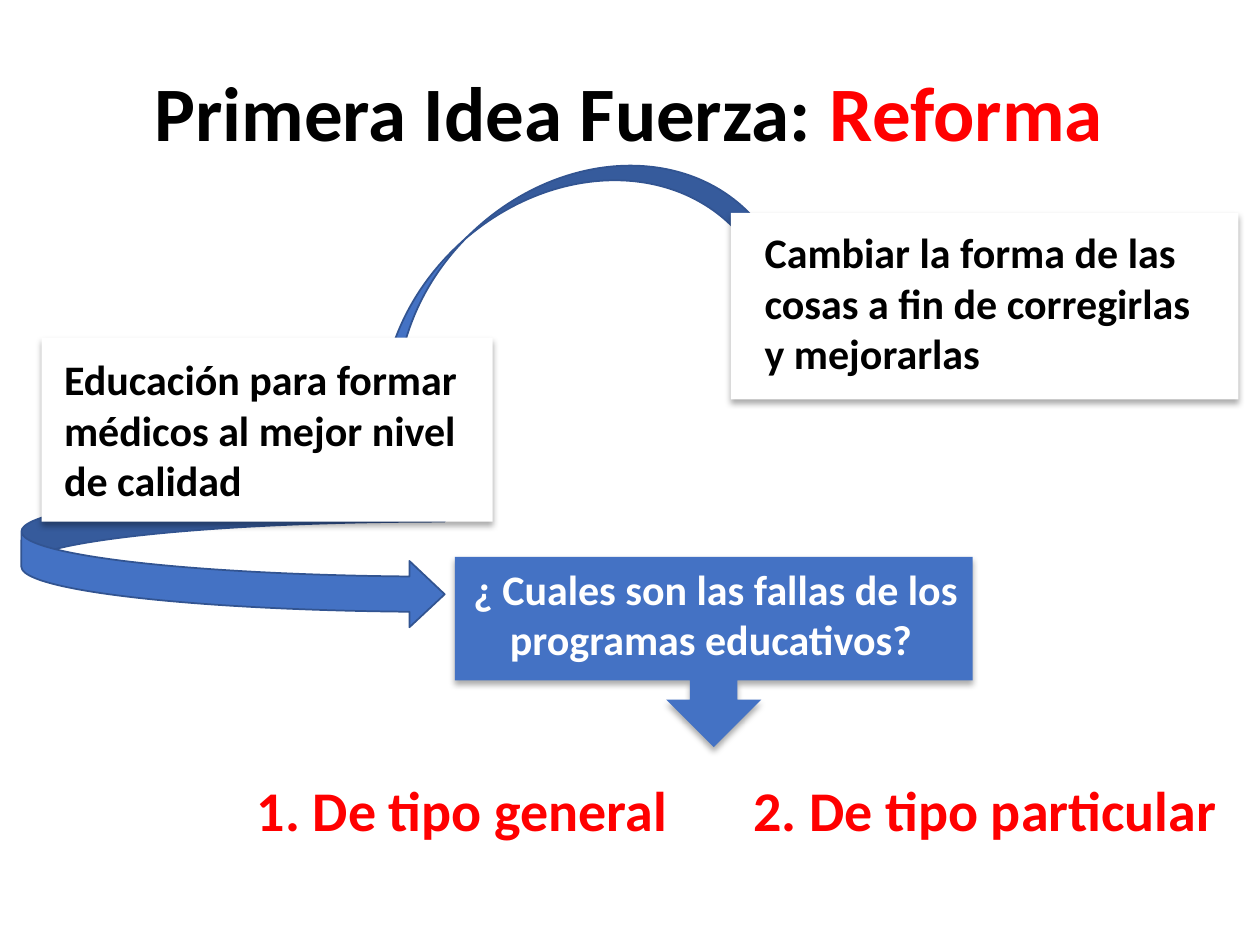
from lxml.etree import SubElement
from pptx import Presentation
from pptx.dml.color import RGBColor
from pptx.enum.shapes import MSO_SHAPE
from pptx.enum.text import MSO_ANCHOR, PP_ALIGN
from pptx.oxml.ns import qn
from pptx.util import Pt

PX = 9144  # 100 px to the inch
BLACK = RGBColor(0x00, 0x00, 0x00)
WHITE = RGBColor(0xFF, 0xFF, 0xFF)
RED = RGBColor(0xFF, 0x00, 0x00)
BLUE = RGBColor(0x44, 0x72, 0xC4)
DARK_BLUE = RGBColor(0x32, 0x54, 0x91)


class SlideBuilder:
    font = "Calibri"

    def __init__(self, slide):
        self.slide = slide

    def shape(self, kind, place, fill):
        shape = self.slide.shapes.add_shape(kind, *(n * PX for n in place))
        shape.shadow.inherit = False
        shape.fill.solid()
        shape.fill.fore_color.rgb = fill
        shape.line.fill.background()
        return shape

    def curved_arrow(self, place, sweep, rotation=0):
        arrow = self.shape(MSO_SHAPE.CURVED_RIGHT_ARROW, place, BLUE)
        arrow.adjustments[1] = sweep
        arrow.rotation = rotation
        arrow.line.color.rgb = DARK_BLUE
        arrow.line.width = Pt(1)

    def card(self, kind, place, fill):
        card = self.shape(kind, place, fill)
        effects = card._element.spPr.find(qn("a:effectLst"))
        shadow = SubElement(effects, qn("a:outerShdw"), blurRad=str(Pt(3.5)),
                            dist=str(Pt(2.2)), dir="5400000", rotWithShape="0")
        color = SubElement(shadow, qn("a:srgbClr"), val="000000")
        SubElement(color, qn("a:alpha"), val="32000")

    def text(self, place, spans, size, align=PP_ALIGN.LEFT, anchor=MSO_ANCHOR.TOP):
        box = self.slide.shapes.add_textbox(*(n * PX for n in place))
        box.text_frame.word_wrap = True
        box.text_frame.vertical_anchor = anchor
        para = box.text_frame.paragraphs[0]
        para.alignment = align
        for words, color in spans:
            span = para.add_run()
            span.text = words
            span.font.name = self.font
            span.font.size = Pt(size)
            span.font.bold = True
            span.font.color.rgb = color
        return para

    def tab_stop(self, para, position):
        stops = SubElement(para._p.get_or_add_pPr(), qn("a:tabLst"))
        SubElement(stops, qn("a:tab"), pos=str(position * PX), algn="l")


def main():
    deck = Presentation()
    deck.slide_width, deck.slide_height = 1000 * PX, 750 * PX
    page = SlideBuilder(deck.slides.add_slide(deck.slide_layouts[6]))

    # Curved arrows behind the cards
    page.curved_arrow((347, 63, 142, 356), 0.12, rotation=46.8)
    page.curved_arrow((17, 386, 336, 112), 0.47)

    # Cards
    page.card(MSO_SHAPE.RECTANGLE, (580, 169, 403, 148), WHITE)
    page.card(MSO_SHAPE.RECTANGLE, (33, 268, 358, 146), WHITE)
    page.card(MSO_SHAPE.DOWN_ARROW_CALLOUT, (361, 442, 411, 151), BLUE)

    # Title
    title = page.text((68, 20, 862, 145),
                      [("Primera Idea Fuerza: ", BLACK), ("Reforma", RED)],
                      44, PP_ALIGN.CENTER, MSO_ANCHOR.MIDDLE)
    title.line_spacing = 0.9

    # Card texts
    page.text((597, 175, 360, 131),
              [("Cambiar la forma de las cosas a fin de corregirlas y mejorarlas", BLACK)], 24)
    page.text((41, 276, 358, 131),
              [("Educación para formar médicos al mejor nivel de calidad", BLACK)], 24)
    page.text((361, 442, 414, 91),
              [("¿ Cuales son las fallas de los programas educativos? ", WHITE)],
              24, PP_ALIGN.CENTER)

    # Two kinds of failure, side by side
    kinds = page.text((194, 611, 812, 64),
                      [("1. De tipo general\t2. De tipo particular", RED)], 32)
    page.tab_stop(kinds, 394)

    deck.save("out.pptx")


if __name__ == "__main__":
    main()
